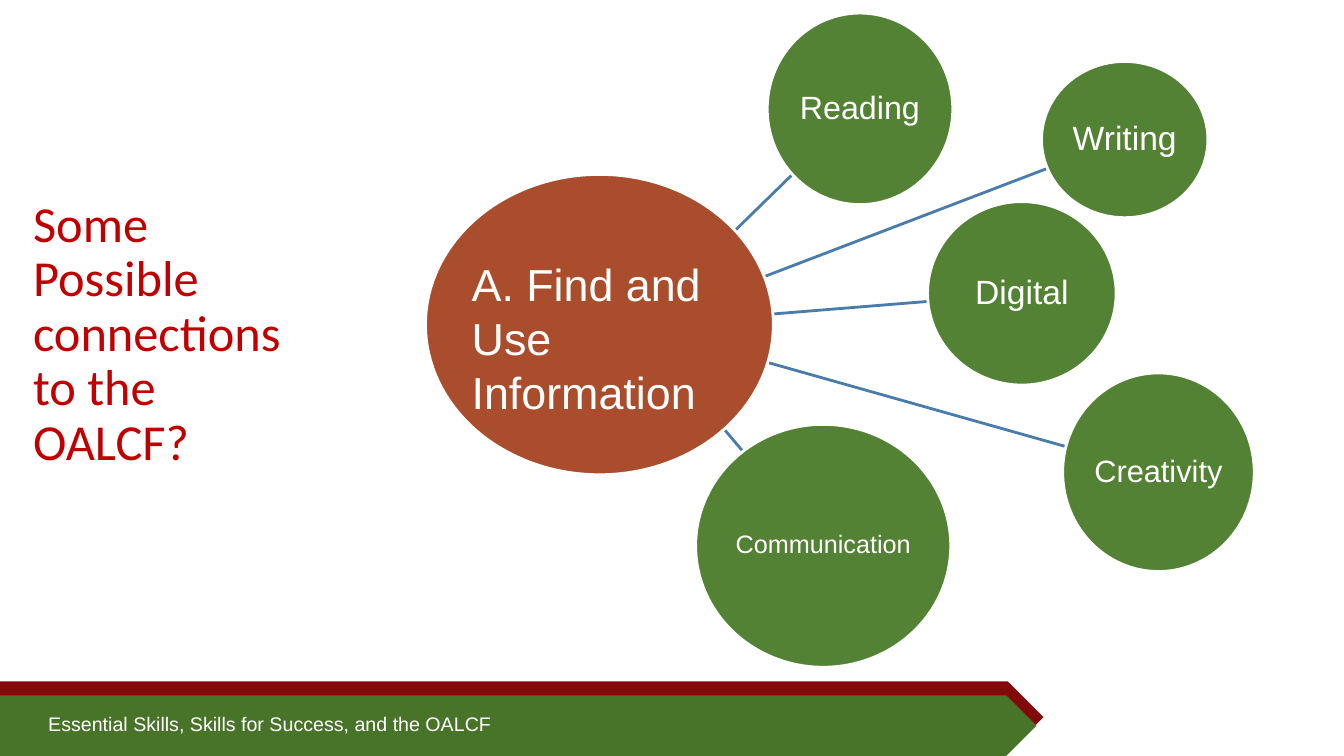
from pptx import Presentation
from pptx.dml.color import RGBColor
from pptx.enum.shapes import MSO_CONNECTOR, MSO_SHAPE
from pptx.enum.text import MSO_ANCHOR, PP_ALIGN
from pptx.util import Inches, Pt
from lxml import etree

OVAL, PLATE = MSO_SHAPE.OVAL, MSO_SHAPE.PENTAGON
STRAIGHT = MSO_CONNECTOR.STRAIGHT
TOP, MIDDLE = MSO_ANCHOR.TOP, MSO_ANCHOR.MIDDLE
LEFT, CENTER = PP_ALIGN.LEFT, PP_ALIGN.CENTER

# Content: boxes are (left, top, width, height) in inches
TITLE = ("Some Possible connections to the OALCF?", (0.23, 0.66, 2.7, 5.33))
FOOTER = ("Essential Skills, Skills for Success, and the OALCF", (0.38, 7.01, 9.27, 0.34))
HUB = ("A. Find and Use Information", (4.22, 1.73, 3.45, 2.98), (4.58, 2.5, 2.84, 1.72))
# Skill, text size, circle box, spoke start, spoke end
SKILLS = [
    ("Reading", 23, (7.61, 0.13, 1.84, 1.9), (6.99, 2.58), (7.86, 1.73)),
    ("Writing", 24, (10.33, 0.61, 1.65, 1.55), (6.99, 2.97), (10.39, 1.67)),
    ("Digital", 24, (9.2, 2, 1.87, 1.82), (6.99, 3.17), (9.21, 2.99)),
    ("Creativity", 22, (10.54, 3.7, 1.9, 1.97), (6.99, 3.42), (10.57, 4.43)),
    ("Communication", 18, (6.9, 4.21, 2.53, 2.41), (6.88, 3.9), (7.37, 4.48)),
]
BANNER = [("banner_back", (0, 6.76, 10.35, 0.71)), ("banner_front", (0, 6.9, 10.28, 0.6))]

THEME = {
    "colours": {
        "title": "C00000", "text": "FFFFFF", "outline": "FFFFFF", "spoke": "497CAB",
        "hub": "A94D2D", "skill": "548235",
        "banner_back": "82080A", "banner_front": "487429",
    },
    "sizes": {"title": 36, "hub": 32, "footer": 14},
    "fonts": {"title": "Calibri", "body": "Arial"},
    "line": 2,
}


def colour(name):
    return RGBColor.from_string(THEME["colours"][name])


def inches(values):
    return [Inches(value) for value in values]


def add_shape(page, kind, box, fill, outline=None):
    shape = page.shapes.add_shape(kind, *inches(box))
    shape.shadow.inherit = False
    shape.fill.solid()
    shape.fill.fore_color.rgb = colour(fill)
    if outline:
        shape.line.color.rgb = colour(outline)
        shape.line.width = Pt(THEME["line"])
    else:
        shape.line.fill.background()
    return shape


def write(shape, text, size, font="body", ink="text", align=LEFT,
          anchor=TOP, spacing=None, margins=(0.1, 0.05), wrap=True):
    frame = shape.text_frame
    frame.word_wrap = wrap
    frame.vertical_anchor = anchor
    frame.margin_left = frame.margin_right = Inches(margins[0])
    frame.margin_top = frame.margin_bottom = Inches(margins[1])
    para = frame.paragraphs[0]
    para.alignment = align
    if spacing:
        para.line_spacing = spacing
    span = para.add_run()
    span.text = text
    span.font.name = THEME["fonts"][font]
    span.font.size = Pt(size)
    span.font.color.rgb = colour(ink)


def add_spoke(page, start, end):
    spoke = page.shapes.add_connector(STRAIGHT, *inches(start + end))
    spoke.line.color.rgb = colour("spoke")
    spoke.line.width = Pt(THEME["line"])
    properties = spoke._element.spPr
    namespace = properties.nsmap["a"]
    etree.SubElement(properties, f"{{{namespace}}}effectLst")


deck = Presentation()
deck.slide_width, deck.slide_height = Inches(13.33), Inches(7.5)
page = deck.slides.add_slide(deck.slide_layouts[6])
sizes = THEME["sizes"]

# Footer banner
for fill, box in BANNER:
    add_shape(page, PLATE, box, fill)
text, box = FOOTER
write(page.shapes.add_textbox(*inches(box)), text, sizes["footer"])

# Title
text, box = TITLE
write(page.shapes.add_textbox(*inches(box)), text, sizes["title"], font="title",
      ink="title", anchor=MIDDLE, spacing=0.9)

# Spokes lie beneath the circles
for _, _, _, start, end in SKILLS:
    add_spoke(page, start, end)

# Hub and skill circles
text, circle_box, text_box = HUB
add_shape(page, OVAL, circle_box, "hub", "outline")
for skill, size, box, _, _ in SKILLS:
    circle = add_shape(page, OVAL, box, "skill", "outline")
    write(circle, skill, size, align=CENTER, anchor=MIDDLE, spacing=0.9,
          margins=(0, 0), wrap=False)
write(page.shapes.add_textbox(*inches(text_box)), text, sizes["hub"])

deck.save("out.pptx")
